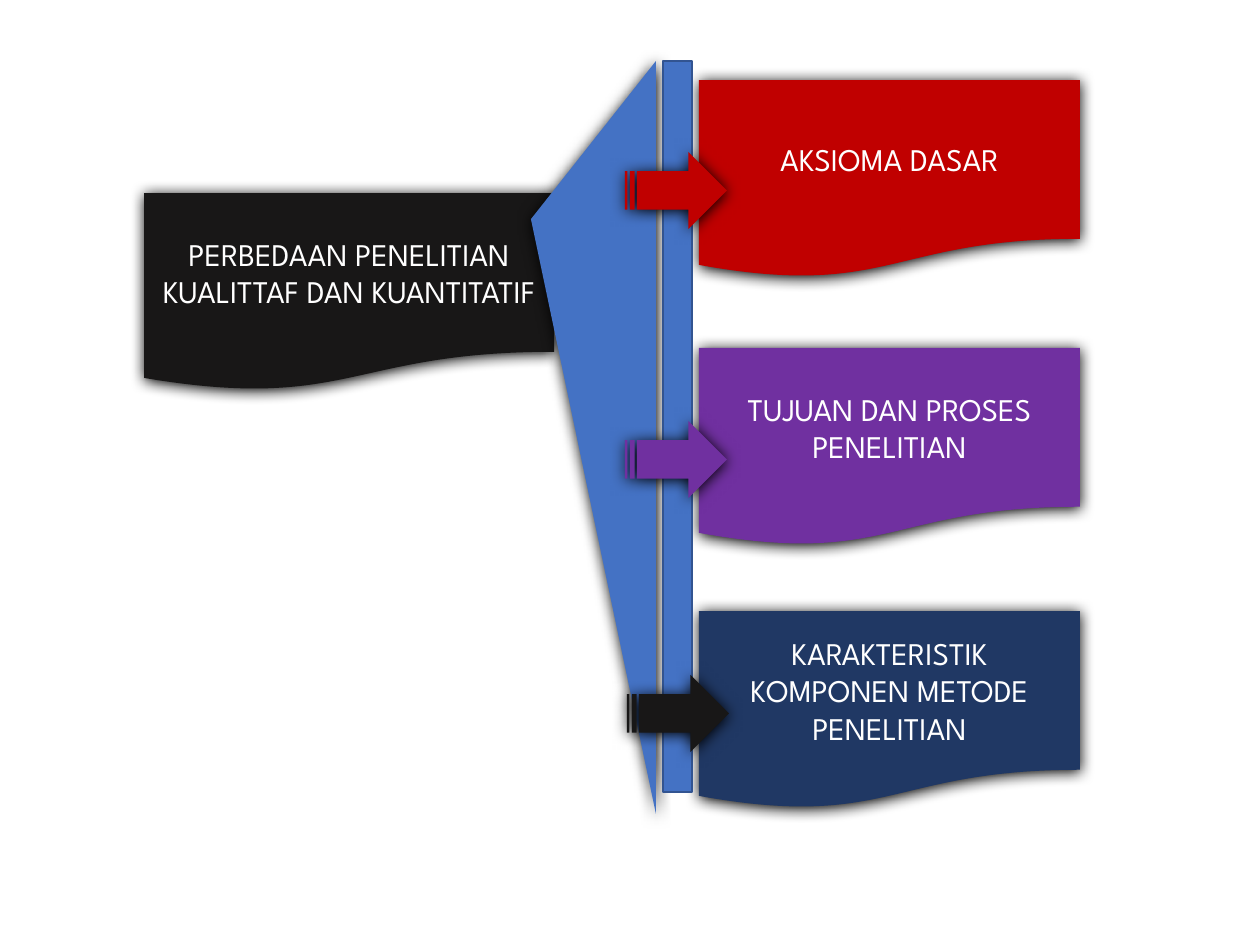
import pptx
import pptx.util
import pptx.dml.color
import pptx.enum.shapes
import pptx.enum.text
import pptx.oxml
import pptx.oxml.ns

KIND = pptx.enum.shapes.MSO_SHAPE
FONT = "League Spartan"
SCALE = 914400 / 126
COLOR = {
    "black": "181717",
    "red": "C00000",
    "purple": "7030A0",
    "navy": "203864",
    "blue": "4472C4",
    "edge": "325491",
    "white": "FFFFFF",
}
TOPICS = [
    ("AKSIOMA DASAR", 80, "red", 625, 152, "red"),
    ("TUJUAN DAN PROSES PENELITIAN", 348, "purple", 625, 421, "purple"),
    ("KARAKTERISTIK KOMPONEN METODE PENELITIAN", 611, "navy", 627, 675, "black"),
]


def px(n):
    return pptx.util.Emu(round(n * SCALE))


def rgb(name):
    return pptx.dml.color.RGBColor.from_string(COLOR[name])


def add_shape(slide, kind, box, color):
    shape = slide.shapes.add_shape(kind, *map(px, box))
    shape.shadow.inherit = False
    shape.fill.solid()
    shape.fill.fore_color.rgb = rgb(color)
    shape.line.fill.background()
    return shape


def add_glow(shape):
    effects = shape._element.spPr.find(pptx.oxml.ns.qn("a:effectLst"))
    effects.append(pptx.oxml.parse_xml(
        f'<a:outerShdw {pptx.oxml.ns.nsdecls("a")} blurRad="107950" '
        'dist="12700" dir="5400000" algn="ctr" rotWithShape="0">'
        '<a:srgbClr val="000000"/></a:outerShdw>'
    ))


def add_card(slide, text, box, color):
    card = add_shape(slide, KIND.FLOWCHART_DOCUMENT, box, color)
    add_glow(card)
    frame = card.text_frame
    frame.word_wrap = True
    frame.vertical_anchor = pptx.enum.text.MSO_ANCHOR.MIDDLE
    frame.text = text
    para = frame.paragraphs[0]
    para.alignment = pptx.enum.text.PP_ALIGN.CENTER
    font = para.runs[0].font
    font.name = FONT
    font.size = pptx.util.Pt(18)
    font.color.rgb = rgb("white")


def add_fan(slide):
    fan = add_shape(slide, KIND.ISOSCELES_TRIANGLE, (217, 375, 753, 125), "blue")
    fan.rotation = 270
    fan.adjustments[0] = 0.79
    add_glow(fan)


def add_bar(slide):
    bar = add_shape(slide, KIND.RECTANGLE, (663, 61, 29, 731), "blue")
    bar.line.color.rgb = rgb("edge")
    bar.line.width = pptx.util.Pt(1)


def add_arrow(slide, left, top, color):
    arrow = add_shape(slide, KIND.STRIPED_RIGHT_ARROW, (left, top, 102, 77), color)
    add_glow(arrow)


def main():
    deck = pptx.Presentation()
    deck.slide_width = pptx.util.Inches(10)
    deck.slide_height = pptx.util.Inches(7.5)
    slide = deck.slides.add_slide(deck.slide_layouts[6])
    add_card(slide, "PERBEDAAN PENELITIAN KUALITTAF DAN KUANTITATIF",
             (144, 193, 410, 198), "black")
    for text, top, color, *_ in TOPICS:
        add_card(slide, text, (699, top, 381, 198), color)
    add_fan(slide)
    add_bar(slide)
    for *_, left, top, color in TOPICS:
        add_arrow(slide, left, top, color)
    deck.save("out.pptx")


if __name__ == "__main__":
    main()
